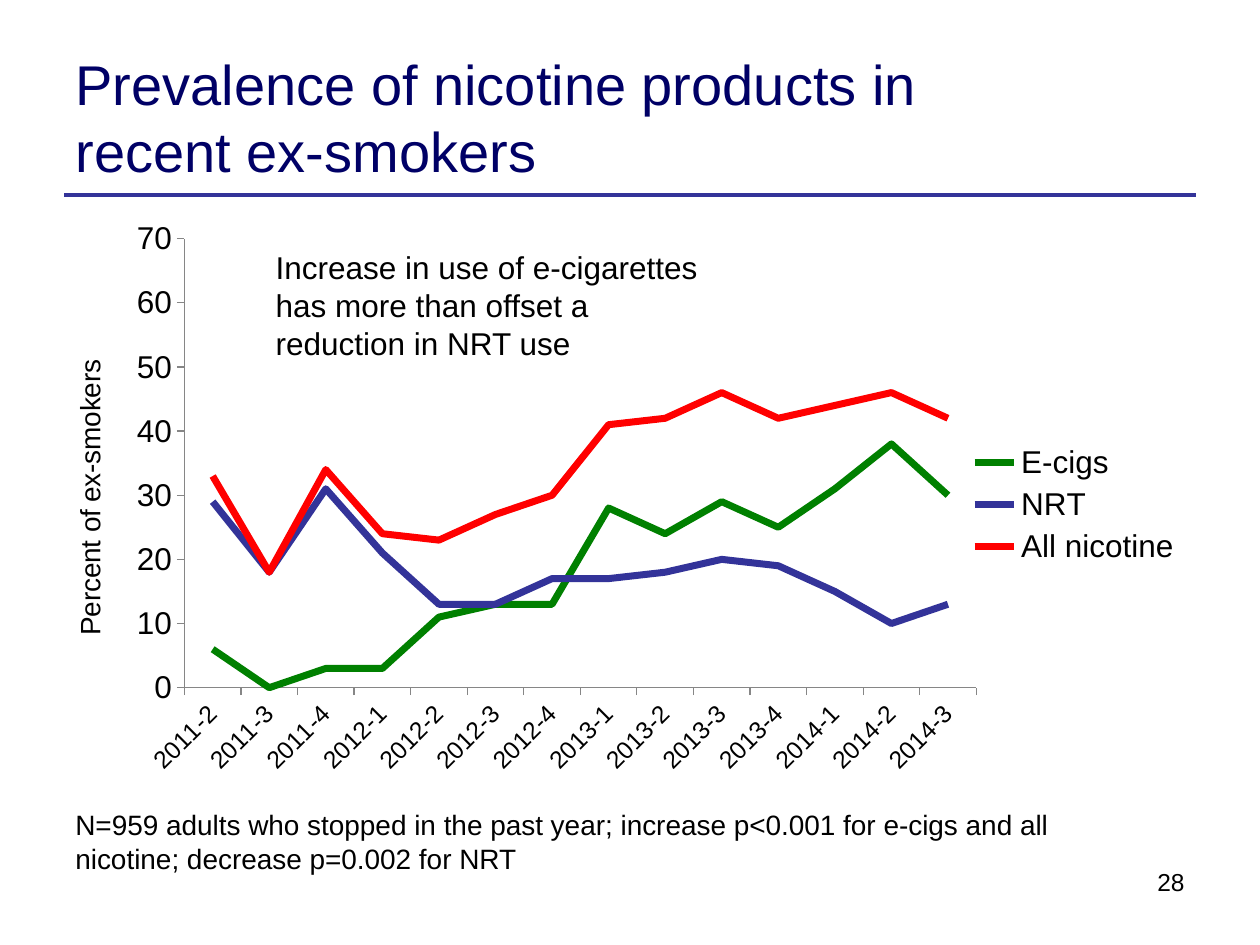
from lxml import etree
from pptx import Presentation
from pptx.chart.data import CategoryChartData as Data
from pptx.dml.color import RGBColor as RGB
from pptx.enum.chart import XL_CHART_TYPE as Kind, XL_LEGEND_POSITION as Side
from pptx.enum.chart import XL_TICK_MARK as Tick
from pptx.enum.text import MSO_ANCHOR as Anchor, PP_ALIGN as Align
from pptx.oxml import parse_xml
from pptx.oxml.ns import nsdecls, qn
from pptx.util import Inches, Pt

FONT = "Arial"
INK = {"text": "000000", "title": "000066", "rule": "333399", "axis": "868686",
       "green": "008000", "blue": "333399", "red": "FF0000"}
QUARTERS = [f"{year}-{q}" for year in range(2011, 2015) for q in range(1, 5)][1:-1]
SERIES = [
    ("E-cigs", "green", (6, 0, 3, 3, 11, 13, 13, 28, 24, 29, 25, 31, 38, 30)),
    ("NRT", "blue", (29, 18, 31, 21, 13, 13, 17, 17, 18, 20, 19, 15, 10, 13)),
    ("All nicotine", "red", (33, 18, 34, 24, 23, 27, 30, 41, 42, 46, 42, 44, 46, 42)),
]


def style(font, size, color="text"):
    font.name, font.size, font.bold = FONT, Pt(size), False
    font.color.rgb = RGB.from_string(INK[color])


def paint(line, color, width):
    line.color.rgb = RGB.from_string(INK[color])
    line.width = Pt(width)


def inches(box):
    return [Inches(n) for n in box]


def add_title(slide, box, text):
    title = slide.shapes.title
    title.left, title.top, title.width, title.height = inches(box)
    frame = title.text_frame
    frame.text = text
    frame.word_wrap = True
    frame.vertical_anchor = Anchor.MIDDLE
    para = frame.paragraphs[0]
    para.alignment = Align.LEFT
    style(para.font, 32, "title")


def add_rule(slide, left, right, top):
    x1, x2, y = inches((left, right, top))
    rule = slide.shapes.add_connector(1, x1, y, x2, y)
    paint(rule.line, "rule", 2.25)
    etree.SubElement(rule._element.spPr, qn("a:effectLst"))


def add_text(slide, box, text, size, align=Align.LEFT):
    frame = slide.shapes.add_textbox(*inches(box)).text_frame
    frame.word_wrap = True
    para = frame.paragraphs[0]
    para.text = text
    para.alignment = align
    style(para.font, size)


def set_plot(chart, box):
    """Fix the inner plot area, in fractions of the chart."""
    parts = "".join(f'<c:{key}Mode val="edge"/>' for key in "xy")
    parts += "".join(f'<c:{key} val="{n}"/>' for key, n in zip("xywh", box))
    layout = parse_xml(f'<c:layout {nsdecls("c")}><c:manualLayout>'
                       f'<c:layoutTarget val="inner"/>{parts}'
                       '</c:manualLayout></c:layout>')
    area = chart._chartSpace.chart.plotArea
    for old in area.findall(qn("c:layout")):
        area.remove(old)
    area.insert(0, layout)


def add_trend(slide, box):
    data = CategoryData = Data()
    data.categories = QUARTERS
    for name, _, vals in SERIES:
        data.add_series(name, vals)
    chart = slide.shapes.add_chart(Kind.LINE, *inches(box), data).chart
    style(chart.font, 18)
    chart.has_title = False
    set_plot(chart, (0.12, 0.05, 0.69, 0.76))

    # Lines
    chart.plots[0].vary_by_categories = False
    for line, (_, color, _) in zip(chart.plots[0].series, SERIES):
        line.smooth = False
        paint(line.format.line, color, 4)

    # Axes
    across, up = chart.category_axis, chart.value_axis
    for axis, size in ((across, 14), (up, 18)):
        axis.has_major_gridlines = False
        axis.major_tick_mark = Tick.OUTSIDE
        axis.minor_tick_mark = Tick.NONE
        style(axis.tick_labels.font, size)
        paint(axis.format.line, "axis", 0.75)
    across._element.find(qn("c:txPr")).find(qn("a:bodyPr")).set("rot", "-2700000")
    up.minimum_scale, up.maximum_scale, up.major_unit = 0, 70, 10
    para = up.axis_title.text_frame.paragraphs[0]
    para.text = "Percent of ex-smokers"
    style(para.font, 16)

    # Legend
    chart.has_legend = True
    chart.legend.position = Side.RIGHT
    chart.legend.include_in_layout = False
    style(chart.legend.font, 18)


def main():
    deck = Presentation()
    deck.slide_width, deck.slide_height = Inches(10), Inches(7.5)
    slide = deck.slides.add_slide(deck.slide_layouts[5])
    add_rule(slide, 0.51, 9.49, 1.55)
    add_title(slide, (0.5, 0.3, 7.89, 1.25),
              "Prevalence of nicotine products in recent ex-smokers")
    add_trend(slide, (0.37, 1.66, 9.11, 4.69))
    # Notes around the chart
    add_text(slide, (0.5, 6.36, 8.26, 0.64),
             "N=959 adults who stopped in the past year; increase p<0.001 for "
             "e-cigs and all nicotine; decrease p=0.002 for NRT", 16)
    add_text(slide, (2.09, 1.92, 3.7, 1.01),
             "Increase in use of e-cigarettes has more than offset a "
             "reduction in NRT use", 18)
    # Page number
    add_text(slide, (6.73, 6.83, 2.77, 0.52), "28", 14, Align.RIGHT)
    deck.save("out.pptx")


if __name__ == "__main__":
    main()
